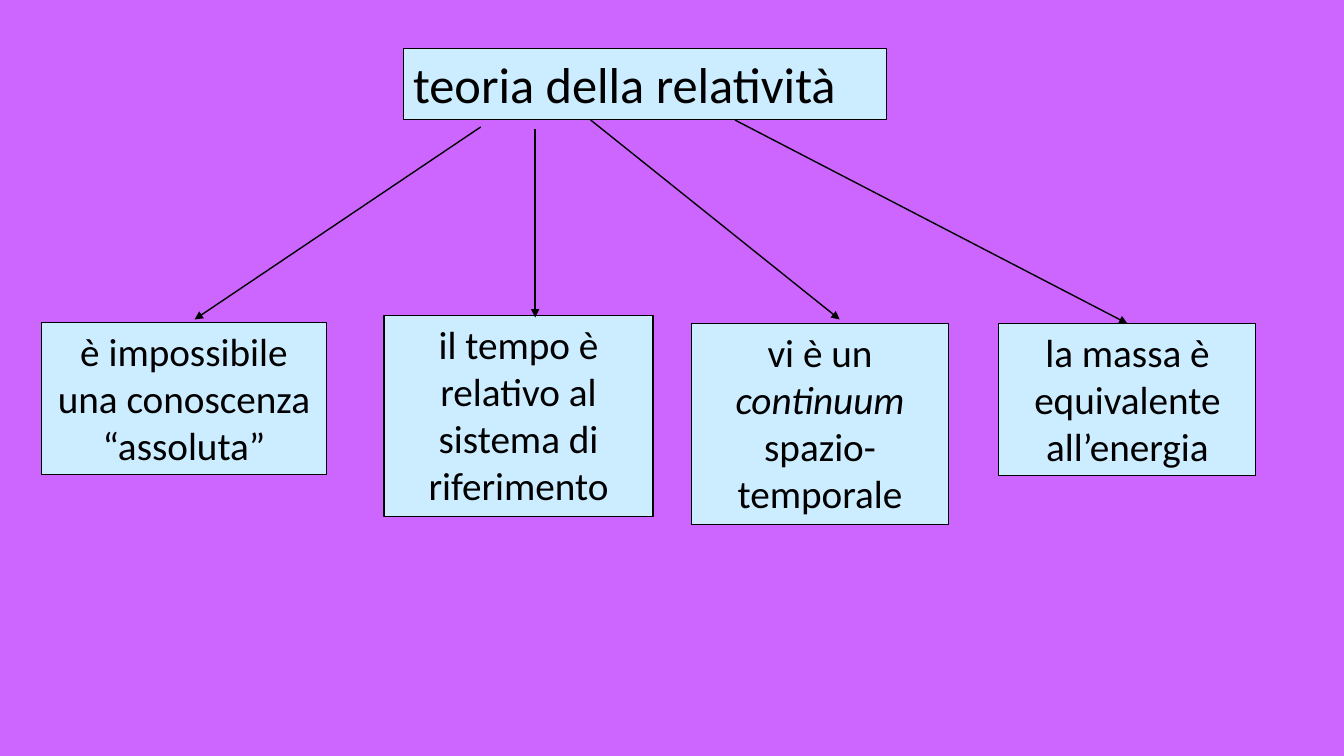
from lxml import etree
from pptx import Presentation
from pptx.dml.color import RGBColor
from pptx.enum.shapes import MSO_CONNECTOR, MSO_SHAPE
from pptx.enum.text import MSO_ANCHOR, MSO_AUTO_SIZE, PP_ALIGN
from pptx.oxml.ns import qn
from pptx.util import Pt

PURPLE = RGBColor(0xCC, 0x66, 0xFF)
PALE_BLUE = RGBColor(0xCC, 0xEC, 0xFF)
BLACK = RGBColor(0x00, 0x00, 0x00)
FONT = "Calibri"
RECTANGLE = MSO_SHAPE.RECTANGLE
STRAIGHT = MSO_CONNECTOR.STRAIGHT
TOP = MSO_ANCHOR.TOP
FIT_SHAPE = MSO_AUTO_SIZE.SHAPE_TO_FIT_TEXT
LEFT = PP_ALIGN.LEFT
CENTER = PP_ALIGN.CENTER
TOP_SIDE = 0

TITLE = "teoria della relatività"
CONSEQUENCES = [
    ((29.5, 230.4, 203.8, 108.7),
     [("è impossibile una conoscenza “assoluta”", False)]),
    ((274.3, 225.4, 192.2, 143.3),
     [("il tempo è relativo al sistema di riferimento", False)]),
    ((493.9, 231.1, 183.6, 143.3),
     [("vi è un ", False), ("continuum", True), (" spazio-temporale", False)]),
    ((713.5, 231.1, 183.6, 108.7),
     [("la massa è equivalente all’energia", False)]),
]
ARROWS = [
    ((343.4, 90.7), (139, 228.2)),
    ((382.3, 92.2), (382.3, 226.8)),
    ((421.9, 85.7), (599.8, 228.2)),
    ((524.9, 85.7), (805.3, 231.1)),
]


def add_box(slide, frame, runs, size, align):
    sp = slide.shapes.add_shape(RECTANGLE, *map(Pt, frame))
    sp.shadow.inherit = False
    sp.fill.solid()
    sp.fill.fore_color.rgb = PALE_BLUE
    sp.line.color.rgb = BLACK
    sp.line.width = Pt(0.75)
    tf = sp.text_frame
    tf.word_wrap = True
    tf.auto_size = FIT_SHAPE
    tf.vertical_anchor = TOP
    p = tf.paragraphs[0]
    p.alignment = align
    for text, italic in runs:
        r = p.add_run()
        r.text = text
        r.font.name = FONT
        r.font.size = Pt(size)
        r.font.italic = italic
        r.font.color.rgb = BLACK
    return sp


def add_arrow(slide, start, end):
    cxn = slide.shapes.add_connector(STRAIGHT, *map(Pt, start + end))
    cxn.line.color.rgb = BLACK
    cxn.line.width = Pt(1)
    ln = cxn.line._get_or_add_ln()
    etree.SubElement(ln, qn("a:tailEnd"), type="triangle")
    etree.SubElement(cxn._element.spPr, qn("a:effectLst"))
    return cxn


def main():
    prs = Presentation()
    prs.slide_width, prs.slide_height = Pt(960), Pt(540)
    slide = prs.slides.add_slide(prs.slide_layouts[6])
    slide.background.fill.solid()
    slide.background.fill.fore_color.rgb = PURPLE

    add_box(slide, (288, 34.6, 345.6, 51.1), [(TITLE, False)], 36, LEFT)
    boxes = [add_box(slide, frame, runs, 28, CENTER) for frame, runs in CONSEQUENCES]
    arrows = [add_arrow(slide, start, end) for start, end in ARROWS]
    arrows[-1].end_connect(boxes[-1], TOP_SIDE)

    prs.save("out.pptx")


if __name__ == "__main__":
    main()
